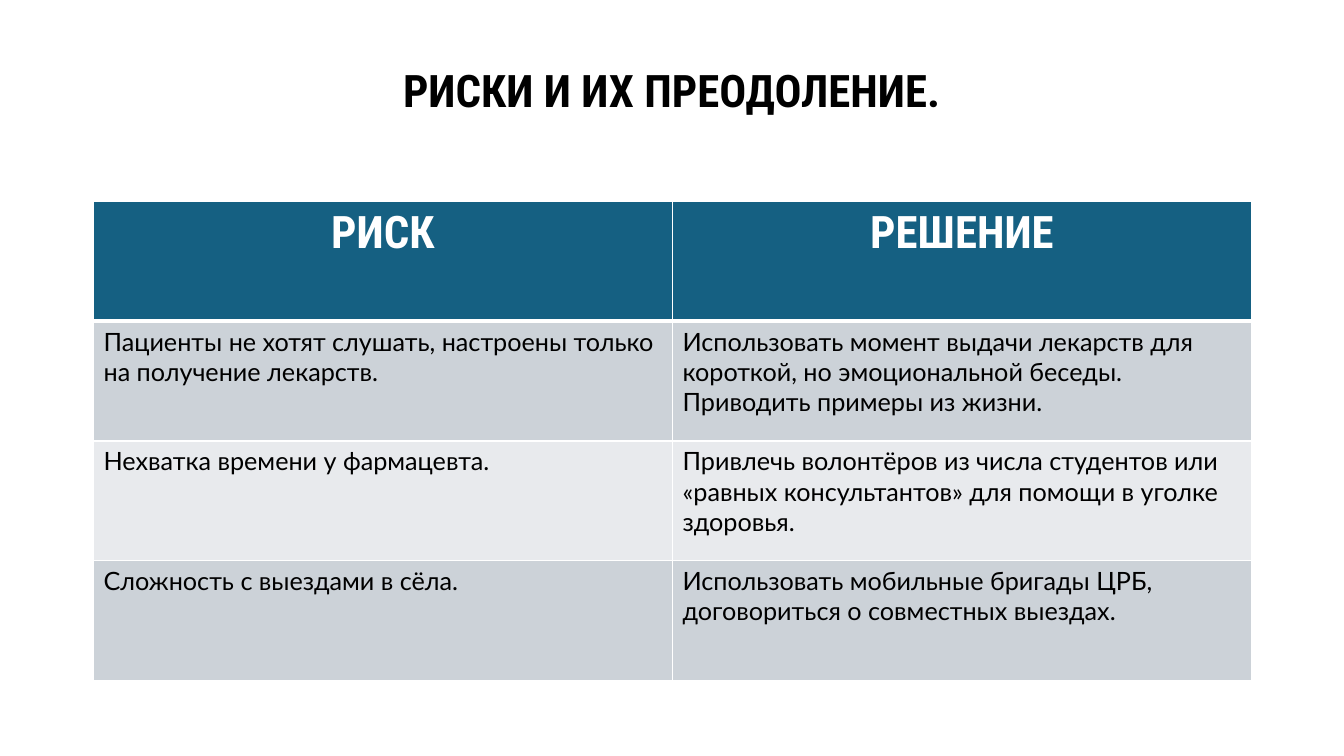
"""Build a slide with a table of risks and their solutions."""
from lxml import etree
from pptx import Presentation
from pptx.dml.color import RGBColor
from pptx.enum.text import MSO_ANCHOR, PP_ALIGN
from pptx.oxml.ns import qn
from pptx.util import Pt

CENTER, LEFT = PP_ALIGN.CENTER, PP_ALIGN.LEFT
MIDDLE = MSO_ANCHOR.MIDDLE
BLACK = RGBColor(0x00, 0x00, 0x00)
WHITE = RGBColor(0xFF, 0xFF, 0xFF)
TEAL = RGBColor(0x15, 0x60, 0x82)
GREY = RGBColor(0xCC, 0xD2, 0xD8)
PALE = RGBColor(0xE8, 0xEA, 0xED)
HEAD_FONT, BODY_FONT = "Roboto Condensed", "Lato"

ROWS = [
    ("РИСК", "РЕШЕНИЕ"),
    ("Пациенты не хотят слушать, настроены только на получение лекарств.",
     "Использовать момент выдачи лекарств для короткой, но эмоциональной "
     "беседы. Приводить примеры из жизни."),
    ("Нехватка времени у фармацевта.",
     "Привлечь волонтёров из числа студентов или «равных консультантов» "
     "для помощи в уголке здоровья."),
    ("Сложность с выездами в сёла.",
     "Использовать мобильные бригады ЦРБ, договориться о совместных выездах."),
]


def write(tf, text, font, size, color, bold, align):
    """Put one formatted paragraph into a text frame."""
    p = tf.paragraphs[0]
    p.text = text
    p.alignment = align
    p.font.name, p.font.size = font, Pt(size)
    p.font.color.rgb, p.font.bold = color, bold
    return p


def add_title(slide, text):
    """Add the centred slide title."""
    sp = slide.shapes.add_textbox(Pt(66), Pt(28.75), Pt(828), Pt(75))
    tf = sp.text_frame
    tf.word_wrap = True
    tf.vertical_anchor = MIDDLE
    p = write(tf, text, HEAD_FONT, 32, BLACK, True, CENTER)
    p.line_spacing = 0.9


def set_borders(cell, top, bottom):
    """Draw white borders around a cell, with top and bottom widths in points."""
    tc_pr = cell._tc.get_or_add_tcPr()
    for side, width in (("L", 1), ("R", 1), ("T", top), ("B", bottom)):
        ln = etree.SubElement(tc_pr, qn(f"a:ln{side}"), w=str(Pt(width)))
        fill = etree.SubElement(ln, qn("a:solidFill"))
        etree.SubElement(fill, qn("a:srgbClr"), val=str(WHITE))


def fill_cell(cell, text, row):
    """Style and fill a cell according to its row."""
    set_borders(cell, 3 if row == 1 else 1, 3 if row == 0 else 1)
    cell.fill.solid()
    if row == 0:
        cell.fill.fore_color.rgb = TEAL
        write(cell.text_frame, text, HEAD_FONT, 32, WHITE, True, CENTER)
    else:
        cell.fill.fore_color.rgb = GREY if row % 2 else PALE
        write(cell.text_frame, text, BODY_FONT, 18, BLACK, False, LEFT)


def add_risk_table(slide):
    """Add the table of risks and solutions."""
    frame = slide.shapes.add_table(len(ROWS), len(ROWS[0]),
                                   Pt(66.8), Pt(144), Pt(827.2), Pt(342))
    for i, texts in enumerate(ROWS):
        for j, text in enumerate(texts):
            fill_cell(frame.table.cell(i, j), text, i)


def main():
    """Create the slide and save it."""
    prs = Presentation()
    prs.slide_width, prs.slide_height = Pt(960), Pt(540)
    slide = prs.slides.add_slide(prs.slide_layouts[6])
    add_title(slide, "РИСКИ И ИХ ПРЕОДОЛЕНИЕ.")
    add_risk_table(slide)
    prs.save("out.pptx")


if __name__ == "__main__":
    main()
